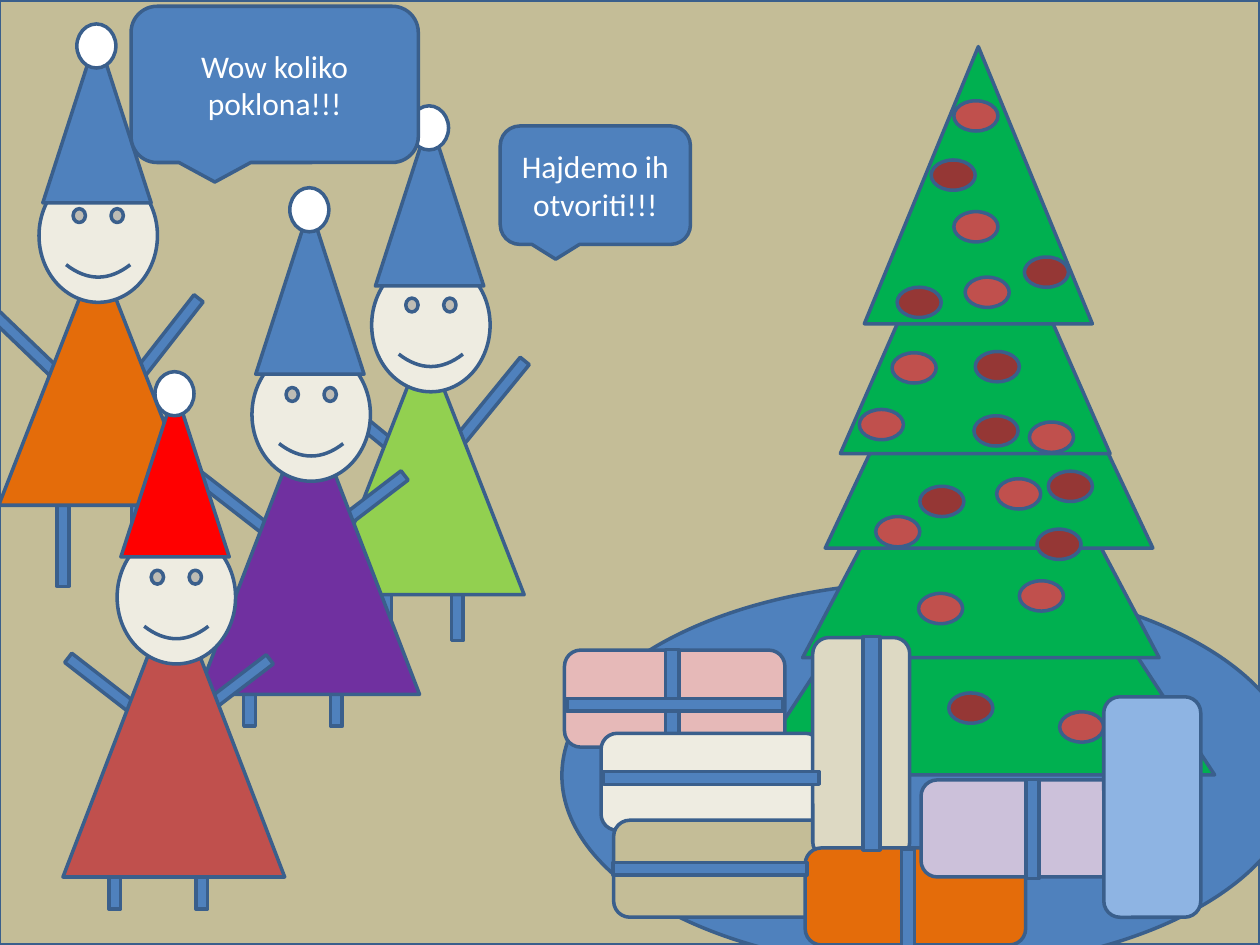
from dataclasses import dataclass

from pptx import Presentation
from pptx import util as u
from pptx.dml.color import RGBColor
from pptx.enum import shapes, text

KIND = shapes.MSO_SHAPE


@dataclass(frozen=True)
class Theme:
    font: str = "Calibri"
    size: int = 18
    edge: float = 2
    line: str = "3A5F8C"
    blue: str = "4F81BD"
    white: str = "FFFFFF"
    tan: str = "C4BD97"
    cream: str = "EEECE1"
    stone: str = "DDD9C3"
    pink: str = "E6B9B8"
    lilac: str = "CCC1DA"
    sky: str = "8EB4E3"
    orange: str = "E46C0A"
    lime: str = "92D050"
    green: str = "00B050"
    purple: str = "7030A0"
    red: str = "FF0000"
    rose: str = "C0504D"
    wine: str = "953735"


T = Theme()


def inch(n):
    return u.Cm(n * 2.54)


def draw(area, kind, box, fill, turn=0):
    shape = area.shapes.add_shape(kind, *map(inch, box))
    shape.shadow.inherit = False
    shape.rotation = turn
    shape.fill.solid()
    shape.fill.fore_color.rgb = RGBColor.from_string(fill)
    shape.line.color.rgb = RGBColor.from_string(T.line)
    shape.line.width = u.Pt(T.edge)
    return shape


def elf(slide, x, y, robe, hat, dress, limbs, tops):
    group = slide.shapes.add_group_shape()
    for dx, dy, turn in limbs:
        draw(group, KIND.MATH_MINUS, (x + dx, y + dy, 1.44, 0.39), T.blue, turn)
    dx, dy, w, h = dress
    draw(group, KIND.ISOSCELES_TRIANGLE, (x + dx, y + dy, w, h), robe)
    draw(group, KIND.SMILEY_FACE, (x, y, 0.94, 1.06), T.cream)
    cone, ball = tops
    draw(group, KIND.ISOSCELES_TRIANGLE, (x + 0.03, y + cone, 0.86, 1.33), hat)
    draw(group, KIND.OVAL, (x + 0.3, y + ball, 0.31, 0.35), T.white)


def tree(slide, x, y):
    group = slide.shapes.add_group_shape()
    tiers = [
        (0, 2.95, 3.7, 2.83),
        (0.43, 2.17, 2.83, 2.68),
        (0.61, 1.22, 2.6, 2.76),
        (0.73, 0.79, 2.14, 2.44),
        (0.92, 0, 1.81, 2.2),
    ]
    for dx, dy, w, h in tiers:
        draw(group, KIND.ISOSCELES_TRIANGLE, (x + dx, y + dy, w, h), T.green)
    balls = {
        T.rose: [
            (1.63, 0.43), (1.63, 1.31), (1.72, 1.83), (1.14, 2.43),
            (0.88, 2.88), (2.23, 2.98), (1.97, 3.43), (1.01, 3.73),
            (2.15, 4.24), (1.35, 4.34), (2.47, 5.28),
        ],
        T.wine: [
            (1.45, 0.9), (2.19, 1.67), (1.18, 1.91), (1.8, 2.42),
            (1.79, 2.93), (2.38, 3.37), (1.36, 3.49), (2.29, 3.83),
            (1.59, 5.13),
        ],
    }
    for fill, spots in balls.items():
        for dx, dy in spots:
            draw(group, KIND.OVAL, (x + dx, y + dy, 0.35, 0.24), fill)


def gifts(slide, x, y):
    def pack(dx, dy, fill, turn=0):
        draw(slide, KIND.ROUNDED_RECTANGLE, (x + dx, y + dy, 1.75, 0.77), fill, turn)

    def band(dx, dy, w, turn=0):
        h = 0.44 if turn else 0.43
        return draw(slide, KIND.MATH_MINUS, (x + dx, y + dy, w, h), T.blue, turn)

    pack(0, 0, T.pink)
    band(0.32, 0.17, 1.07, 90)
    band(-0.29, 0.22, 2.33)
    pack(0.29, 0.66, T.cream)
    pack(0.39, 1.35, T.tan)
    pack(1.48, 0.39, T.stone, 90)
    pack(1.91, 1.57, T.orange)
    pack(2.83, 1.03, T.lilac)
    pack(3.79, 0.86, T.sky, 90)
    band(0, 0.8, 2.33)
    band(0.11, 1.52, 2.09)
    band(2.19, 1.75, 1.07, 90)
    band(3.18, 1.2, 1.07, 90)
    band(1.28, 0.52, 2.31, 90).adjustments[0] = 0.305


def speech(slide, box, words):
    shape = draw(slide, KIND.ROUNDED_RECTANGULAR_CALLOUT, box, T.blue)
    frame = shape.text_frame
    frame.word_wrap = True
    frame.vertical_anchor = text.MSO_ANCHOR.MIDDLE
    frame.text = words
    para = frame.paragraphs[0]
    para.alignment = text.PP_ALIGN.CENTER
    para.font.name = T.font
    para.font.size = u.Pt(T.size)
    para.font.color.rgb = RGBColor.from_string(T.white)


def main():
    deck = Presentation()
    deck.slide_width, deck.slide_height = inch(10), inch(7.5)
    slide = deck.slides.add_slide(deck.slide_layouts[6])
    draw(slide, KIND.RECTANGLE, (-0.01, 0, 10.01, 7.5), T.tan)
    draw(slide, KIND.OVAL, (4.46, 4.62, 5.84, 3.07), T.blue)
    elf(slide, 0.31, 1.34, T.orange, T.blue, (-0.32, 0.66, 1.57, 2.01),
        [(-0.53, 2.59, 90), (0.06, 2.59, 90), (-0.72, 1.3, 43.8), (0.22, 1.25, 128)],
        (-1.06, -1.15))
    elf(slide, 2.95, 2.05, T.lime, T.blue, (-0.36, 0.66, 1.57, 2.01),
        [(-0.61, 2.24, 90), (-0.04, 2.31, 90), (-0.8, 1.1, 39.3), (0.16, 1.03, 129.2)],
        (-1.11, -1.21))
    tree(slide, 5.94, 0.37)
    wide = (-0.43, 0.46, 1.76, 2.29)
    legs = [(-0.74, 2.28, 90), (-0.05, 2.28, 90)]
    elf(slide, 2, 2.76, T.purple, T.blue, wide,
        legs + [(-0.82, 1.08, 217.8), (0.07, 1.14, 142.6)], (-1.12, -1.27))
    elf(slide, 0.93, 4.21, T.rose, T.red, wide,
        legs + [(-0.69, 1.14, 217.8), (0.07, 1.15, 142.6)], (-1.12, -1.26))
    gifts(slide, 4.48, 5.16)
    speech(slide, (1.04, 0.05, 2.28, 1.24), "Wow koliko poklona!!!")
    speech(slide, (3.97, 1, 1.51, 0.94), "Hajdemo ih otvoriti!!!")
    deck.save("out.pptx")


if __name__ == "__main__":
    main()
